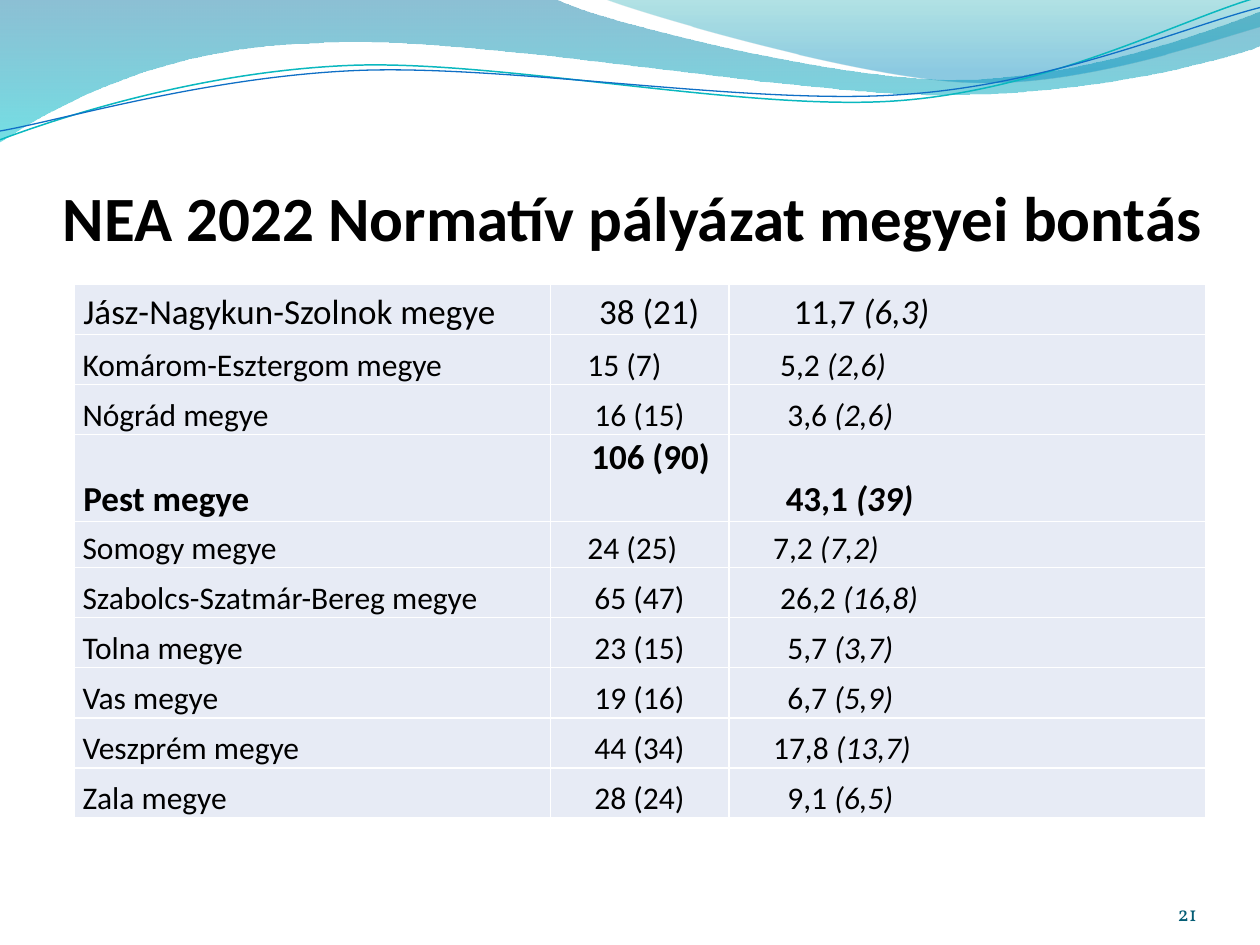
from dataclasses import dataclass

from lxml.etree import SubElement
from pptx import Presentation
from pptx.dml.color import RGBColor as Rgb
from pptx.enum.text import MSO_ANCHOR as Anchor, PP_ALIGN as Align
from pptx.oxml.ns import qn
from pptx.util import Cm, Pt


@dataclass(frozen=True)
class Theme:
    text_font: str = "Calibri"
    number_font: str = "Vollkorn"
    ink: str = "000000"
    number: str = "045D75"
    cell: str = "E7EBF5"
    border: str = "FFFFFF"
    teal_line: str = "0AB8BF"
    blue_line: str = "0F6FC6"
    # Gradient stops: position, colour, opacity in percent
    wide_wave: tuple = ((0, "0074A1", 45), (1, "00C6CF", 55))
    right_wave: tuple = ((0, "00A1A9", 30), (0.8, "008BBF", 45))
    title_size: int = 36
    large_size: int = 20
    body_size: int = 18
    number_size: int = 12


# Wave outlines in hundredths of 2.54 cm: a pair is a corner, six numbers a curve
PATH_UNIT = Cm(2.54) / 100
WIDE_WAVE = [(0, 0), (440, -1), (476, 17, 664, 63, 758, 63),
             (853, 63, 958, 26, 1000, 9), (1001, 36),
             (983, 44, 870, 76, 746, 75), (622, 75, 382, 28, 257, 34),
             (129, 36, 46, 83, -1, 113)]
RIGHT_WAVE = [(479, -1), (509, 11, 682, 62, 769, 65),
              (856, 69, 961, 32, 1000, 21), (1000, 0)]
TEAL_LINE = [(0, 111), (48, 93, 158, 57, 277, 52),
             (395, 47, 593, 89, 713, 80), (833, 71, 938, 15, 998, -2)]
BLUE_LINE = [(0, 104), (47, 96, 164, 61, 283, 56),
             (403, 51, 597, 84, 717, 75), (836, 67, 941, 21, 1000, 6)]

# County, grants (indent steps), amount and last year's amount (indent steps)
COUNTIES = [
    ("Jász-Nagykun-Szolnok megye", "38 (21)", 6, "11,7 ", "(6,3)", 8),
    ("Komárom-Esztergom megye", "15 (7)", 5, "5,2 ", "(2,6)", 7),
    ("Nógrád megye", "16 (15)", 6, "3,6 ", "(2,6)", 8),
    ("Pest megye", "106 (90)", 5, "43,1 ", "(39)", 7),
    ("Somogy megye", "24 (25)", 5, "7,2 ", "(7,2)", 6),
    ("Szabolcs-Szatmár-Bereg megye", "65 (47)", 6, "26,2 ", "(16,8)", 7),
    ("Tolna megye", "23 (15)", 6, "5,7 ", "(3,7)", 8),
    ("Vas megye", "19 (16)", 6, "6,7 ", "(5,9)", 8),
    ("Veszprém megye", "44 (34)", 6, "17,8 ", "(13,7)", 6),
    ("Zala megye", "28 (24)", 6, "9,1 ", "(6,5)", 8),
]
LARGE_ROW, PEST_ROW, LOW_ROW = 0, 3, 4


class SlideBuilder:
    def __init__(self, slide, theme):
        self.slide = slide
        self.theme = theme

    def outline(self, parts, close):
        points = [part[i:i + 2] for part in parts for i in range(0, len(part), 2)]
        builder = self.slide.shapes.build_freeform(*points[0], scale=PATH_UNIT)
        builder.add_line_segments(points[1:], close=close)
        shape = builder.convert_to_shape()
        shape.shadow.inherit = False
        # Join each run of three segments that belongs to a curve
        segments = iter(list(shape.element.spPr.iter(qn("a:lnTo"))))
        for part in parts[1:]:
            nodes = [next(segments) for _ in range(len(part) // 2)]
            if len(nodes) == 3:
                curve = nodes[0].makeelement(qn("a:cubicBezTo"))
                nodes[0].addprevious(curve)
                for node in nodes:
                    curve.append(node[0])
                    node.getparent().remove(node)
        return shape

    def wave(self, parts, stops):
        shape = self.outline(parts, True)
        shape.line.fill.background()
        shape.fill.gradient()
        shape.fill.gradient_angle = 270
        for stop, (position, color, _) in zip(shape.fill.gradient_stops, stops):
            stop.position = position
            stop.color.rgb = Rgb.from_string(color)
        for node, (_, _, opacity) in zip(shape.element.spPr.iter(qn("a:srgbClr")), stops):
            SubElement(node, qn("a:alpha"), val=str(opacity * 1000))

    def wave_line(self, parts, color, width):
        shape = self.outline(parts, False)
        shape.fill.background()
        shape.line.color.rgb = Rgb.from_string(color)
        shape.line.width = Pt(width)

    def run(self, paragraph, text, size, font=None, color=None, bold=False, italic=False):
        run = paragraph.add_run()
        run.text = text
        run.font.size = Pt(size)
        run.font.name = font or self.theme.text_font
        run.font.color.rgb = Rgb.from_string(color or self.theme.ink)
        run.font.bold, run.font.italic = bold, italic

    def text(self, box, text, size, align=Align.LEFT, **style):
        frame = self.slide.shapes.add_textbox(*map(Cm, box)).text_frame
        frame.word_wrap = True
        frame.vertical_anchor = Anchor.BOTTOM
        frame.margin_left = frame.margin_right = frame.margin_top = frame.margin_bottom = 0
        paragraph = frame.paragraphs[0]
        paragraph.alignment = align
        self.run(paragraph, text, size, **style)

    def cell(self, cell, runs, size, indent, bold, anchor):
        # One indent step is the width of a space at this size
        cell.margin_left = Cm(0.02 + indent * size * 0.008)
        cell.margin_right = cell.margin_top = Cm(0.03)
        cell.margin_bottom = 0
        cell.vertical_anchor = anchor
        properties = cell._tc.get_or_add_tcPr()
        for side in ("lnL", "lnR", "lnT", "lnB"):
            line = SubElement(properties, qn(f"a:{side}"), w=str(Pt(1)))
            fill = SubElement(line, qn("a:solidFill"))
            SubElement(fill, qn("a:srgbClr"), val=self.theme.border)
        cell.fill.solid()
        cell.fill.fore_color.rgb = Rgb.from_string(self.theme.cell)
        for text, italic in runs:
            self.run(cell.text_frame.paragraphs[0], text, size, bold=bold, italic=italic)

    def county_table(self, left, top, widths, heights):
        table = self.slide.shapes.add_table(
            len(heights), len(widths), Cm(left), Cm(top),
            Cm(sum(widths)), Cm(sum(heights))).table
        table.first_row = table.horz_banding = False
        for column, width in zip(table.columns, widths):
            column.width = Cm(width)
        for index, (county, grants, grant_indent, amount, previous, amount_indent) in enumerate(COUNTIES):
            table.rows[index].height = Cm(heights[index])
            pest = index == PEST_ROW
            size = self.theme.large_size if index in (LARGE_ROW, PEST_ROW) else self.theme.body_size
            contents = [([(county, False)], 1), ([(grants, False)], grant_indent),
                        ([(amount, False), (previous, True)], amount_indent)]
            for column, (runs, indent) in enumerate(contents):
                anchor = Anchor.TOP if pest and column == 1 else Anchor.BOTTOM
                self.cell(table.cell(index, column), runs, size, indent, pest, anchor)


def main():
    presentation = Presentation()
    presentation.slide_width, presentation.slide_height = Cm(25.4), Cm(19.05)
    theme = Theme()
    builder = SlideBuilder(presentation.slides.add_slide(presentation.slide_layouts[6]), theme)

    # Wave header
    builder.wave(WIDE_WAVE, theme.wide_wave)
    builder.wave(RIGHT_WAVE, theme.right_wave)
    builder.wave_line(TEAL_LINE, theme.teal_line, 0.85)
    builder.wave_line(BLUE_LINE, theme.blue_line, 0.75)

    # Title and page number
    builder.text((1.27, 1.94, 23.42, 3.18), "NEA 2022 Normatív pályázat megyei bontás",
                 theme.title_size, bold=True)
    builder.text((22.02, 17.65, 2.11, 1.02), "21", theme.number_size, Align.RIGHT,
                 font=theme.number_font, color=theme.number)

    # County table
    heights = [{PEST_ROW: 1.75, LOW_ROW: 0.93}.get(row, 1.01) for row in range(len(COUNTIES))]
    builder.county_table(1.5, 5.73, (9.6, 3.6, 9.6), heights)

    presentation.save("out.pptx")


if __name__ == "__main__":
    main()
